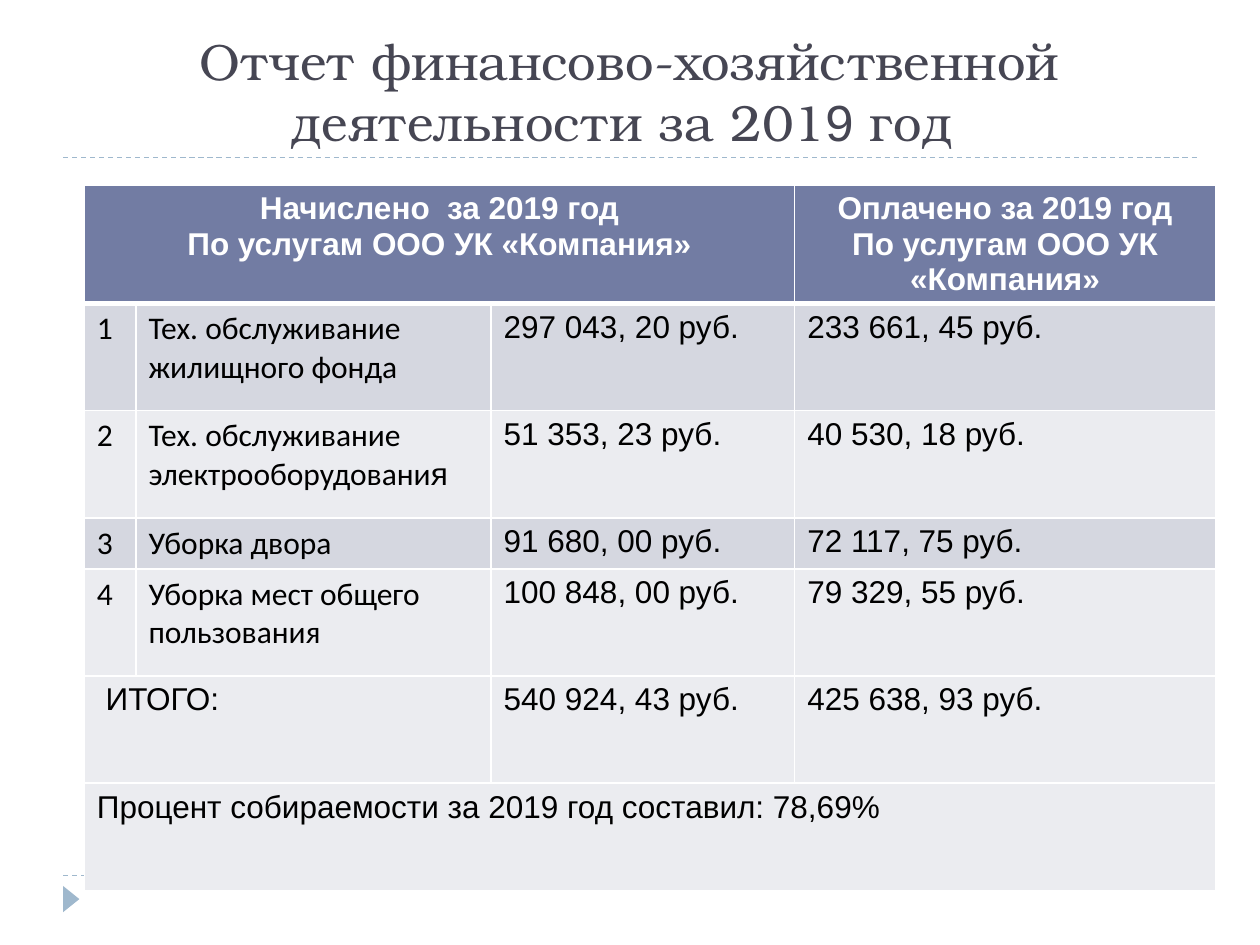
from dataclasses import dataclass

from lxml.etree import SubElement
from pptx import Presentation
from pptx.dml.color import RGBColor as Rgb
from pptx.enum.dml import MSO_LINE_DASH_STYLE as Dash
from pptx.enum.shapes import MSO_CONNECTOR as Connector, MSO_SHAPE as Shape
from pptx.enum.text import MSO_ANCHOR as Anchor, MSO_AUTO_SIZE as AutoSize, PP_ALIGN as Align
from pptx.oxml.ns import qn
from pptx.util import Cm, Pt


@dataclass(frozen=True)
class Theme:
    title_color: str = "464653"
    accent: str = "9FB8CD"
    header: str = "727CA3"
    dark_band: str = "D5D7E0"
    light_band: str = "EBECF0"
    white: str = "FFFFFF"
    black: str = "000000"
    title_size: int = 29
    table_size: int = 18
    title_font: str = "TeX Gyre Bonum"
    number_font: str = "Arial"
    label_font: str = "Calibri"


theme = Theme()


def add_span(para, text, color, **format_values):
    span = para.add_run()
    span.text = text
    span.font.color.rgb = Rgb.from_string(color)
    for name, value in format_values.items():
        setattr(span.font, name, value)


def style_cell(cell, color, top=1, bottom=1):
    properties = cell._tc.get_or_add_tcPr()
    for side, width in {"L": 1, "R": 1, "T": top, "B": bottom}.items():
        border = SubElement(properties, qn(f"a:ln{side}"), w=str(Pt(width)))
        fill = SubElement(border, qn("a:solidFill"))
        SubElement(fill, qn("a:srgbClr"), val=theme.white)
    cell.fill.solid()
    cell.fill.fore_color.rgb = Rgb.from_string(color)


deck = Presentation()
deck.slide_width, deck.slide_height = Cm(25.4), Cm(19.05)
page = deck.slides.add_slide(deck.slide_layouts[5])

for y in (17.65, 3.18):
    rule = page.shapes.add_connector(Connector.STRAIGHT, Cm(1.27), Cm(y), Cm(24.13), Cm(y))
    rule.line.color.rgb = Rgb.from_string(theme.accent)
    rule.line.width = Pt(0.75)
    rule.line.dash_style = Dash.DASH
    SubElement(rule._element.spPr, qn("a:effectLst"))

marker = page.shapes.add_shape(Shape.ISOSCELES_TRIANGLE, Cm(1.17), Cm(17.96), Cm(0.53), Cm(0.33))
marker.rotation = 90
marker.shadow.inherit = False
marker.fill.solid()
marker.fill.fore_color.rgb = Rgb.from_string(theme.accent)
marker.line.fill.background()

title = page.shapes.title
title_box = {"left": Cm(1.27), "top": Cm(0.64), "width": Cm(22.86), "height": Cm(2.54)}
for name, value in title_box.items():
    setattr(title, name, value)
frame_format = {"word_wrap": True, "auto_size": AutoSize.NONE, "vertical_anchor": Anchor.BOTTOM}
for name, value in frame_format.items():
    setattr(title.text_frame, name, value)
para = title.text_frame.paragraphs[0]
para.alignment = Align.CENTER
for text, font in (
    ("Отчет финансово-хозяйственной деятельности за 201", theme.title_font),
    ("9", theme.number_font),
    (" год ", theme.title_font),
):
    add_span(para, text, theme.title_color, name=font, size=Pt(theme.title_size))

company = "По услугам ООО УК «Компания»"
rows = [
    [f"Начислено  за 2019 год\n{company}", "", "", f"Оплачено за 2019 год\n{company}"],
    ["1", "Тех. обслуживание жилищного фонда", "297 043, 20 руб.", "233 661, 45 руб."],
    ["2", "Тех. обслуживание электрооборудования", "51 353, 23 руб.", "40 530, 18 руб."],
    ["3", "Уборка двора", "91 680, 00 руб.", "72 117, 75 руб."],
    ["4", "Уборка мест общего пользования", "100 848, 00 руб.", "79 329, 55 руб."],
    [" ИТОГО:", "", "540 924, 43 руб.", "425 638, 93 руб."],
    ["Процент собираемости за 2019 год составил: 78,69%", "", "", ""],
]
column_widths = [1.04, 7.16, 6.12, 8.48]
row_heights = [1.5, 2.16, 2.16, 0.94, 2.16, 2.16, 2.16]
row_fills = [theme.header] + [theme.dark_band, theme.light_band] * 2 + [theme.light_band] * 2

table = page.shapes.add_table(
    len(rows), len(column_widths), Cm(1.7), Cm(3.73), Cm(sum(column_widths)), Cm(sum(row_heights))
).table
for column, width in zip(table.columns, column_widths):
    column.width = Cm(width)
for row, height in zip(table.rows, row_heights):
    row.height = Cm(height)
for row_index, last_column in ((0, 2), (5, 1), (6, 3)):
    table.cell(row_index, 0).merge(table.cell(row_index, last_column))

for row_index, texts in enumerate(rows):
    is_header = row_index == 0
    for column_index, text in enumerate(texts):
        cell = table.cell(row_index, column_index)
        style_cell(
            cell,
            row_fills[row_index],
            top=3 if row_index == 1 else 1,
            bottom=3 if is_header else 1,
        )
        if not text:
            continue
        is_label = 1 <= row_index <= 4 and column_index < 2
        font = theme.label_font if is_label else theme.number_font
        for line_index, line in enumerate(text.split("\n")):
            frame = cell.text_frame
            para = frame.add_paragraph() if line_index else frame.paragraphs[0]
            para.alignment = Align.CENTER if is_header else Align.LEFT
            pieces = [(line, font)]
            if line.endswith("электрооборудования"):
                pieces = [(line[:-1], font), (line[-1], theme.number_font)]
            for piece, piece_font in pieces:
                add_span(
                    para,
                    piece,
                    theme.white if is_header else theme.black,
                    name=piece_font,
                    size=Pt(theme.table_size),
                    bold=is_header,
                )

deck.save("out.pptx")
